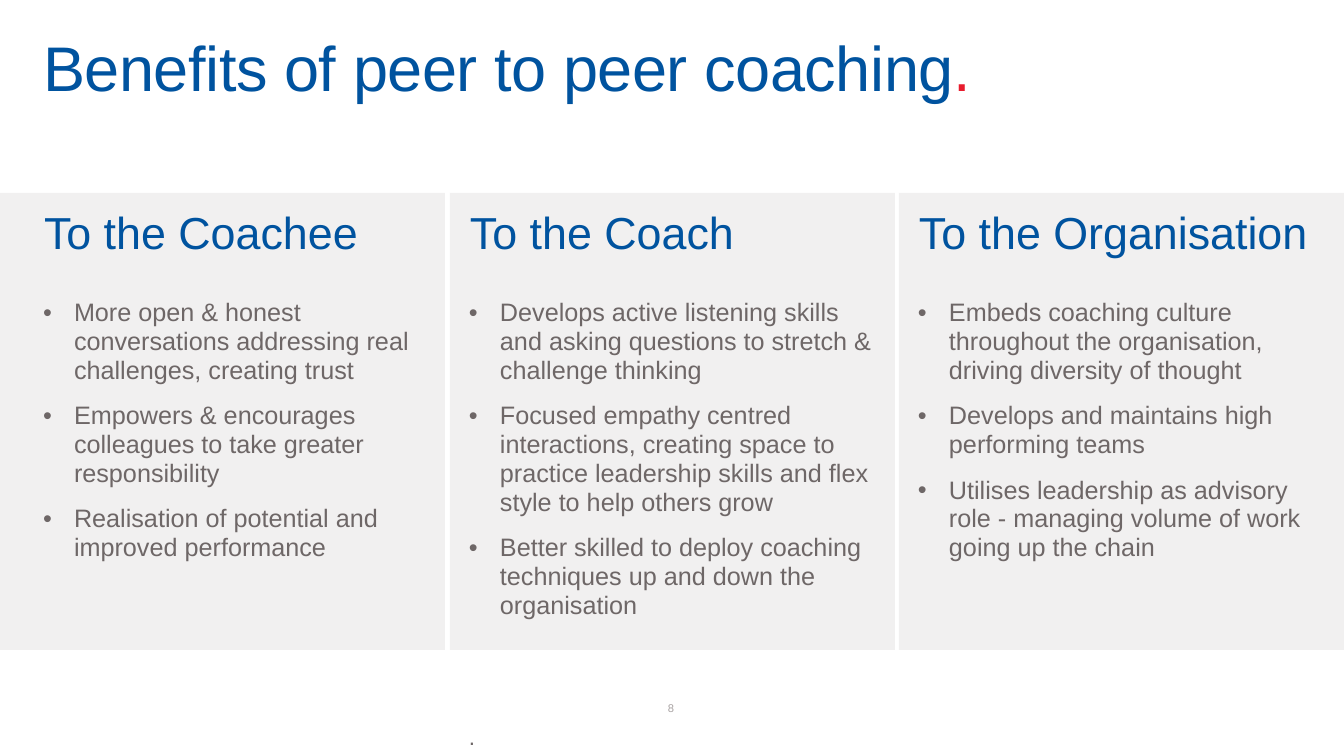
from dataclasses import dataclass
from typing import Any

from lxml.etree import SubElement
from pptx import Presentation
from pptx.dml.color import RGBColor
from pptx.enum.shapes import MSO_SHAPE
from pptx.enum.text import MSO_ANCHOR, MSO_AUTO_SIZE, PP_ALIGN
from pptx.oxml.ns import qn
from pptx.util import Emu, Pt

BLUE = RGBColor(0x00, 0x53, 0x9F)
RED = RGBColor(0xE8, 0x1C, 0x2D)
GREY = RGBColor(0x6E, 0x67, 0x67)
PALE_GREY = RGBColor(0xA9, 0xA3, 0xA3)
PANEL_GREY = RGBColor(0xF1, 0xF0, 0xF0)

SLIDE_WIDTH, SLIDE_HEIGHT = 1344, 756
PANEL_TOP, PANEL_WIDTH, PANEL_HEIGHT = 193, 445, 457
LIST_TOP, LIST_HEIGHT, LIST_INDENT = 299, 306, 31

TITLE_PARA = {"alignment": PP_ALIGN.LEFT, "line_spacing": 0.9, "space_before": Pt(0)}
BODY_PARA = {"alignment": PP_ALIGN.LEFT, "line_spacing": 0.95,
             "space_before": Pt(0), "space_after": Pt(12)}
NUMBER_PARA = {"alignment": PP_ALIGN.CENTER}


@dataclass
class Column:
    heading: str
    benefits: list[str]
    placeholder: int
    inset: int
    list_width: int
    closing: str = ""


COLUMNS = [
    Column("To the Coachee", [
        "More open & honest conversations addressing real challenges, creating trust",
        "Empowers & encourages colleagues to take greater responsibility",
        "Realisation of potential and improved performance",
    ], 1, 43, 391),
    Column("To the Coach", [
        "Develops active listening skills and asking questions to stretch & challenge thinking",
        "Focused empathy centred interactions, creating space to practice leadership skills "
        "and flex style to help others grow",
        "Better skilled to deploy coaching techniques up and down the organisation",
    ], 2, 19, 405, "."),
    Column("To the Organisation", [
        "Embeds coaching culture throughout the organisation, driving diversity of thought",
        "Develops and maintains high performing teams",
        "Utilises leadership as advisory role - managing volume of work going up the chain",
    ], 4, 19, 410),
]


def px(length: int) -> Emu:
    return Emu(round(length * 914400 * 10 / 1008))


def apply(target: Any, values: dict[str, Any]) -> None:
    for name, value in values.items():
        setattr(target, name, value)


def place(box: Any, left: int, top: int, width: int, height: int) -> None:
    apply(box, {"left": px(left), "top": px(top),
                "width": px(width), "height": px(height)})


def set_frame(box: Any, left: int = 0, top: int = 0) -> Any:
    frame = box.text_frame
    apply(frame, {"margin_left": px(left), "margin_top": px(top),
                  "margin_right": 0, "margin_bottom": 0, "word_wrap": True,
                  "auto_size": MSO_AUTO_SIZE.NONE, "vertical_anchor": MSO_ANCHOR.TOP})
    return frame


def add_span(para: Any, text: str, size: int, color: RGBColor) -> Any:
    span = para.add_run()
    span.text = text
    apply(span.font, {"name": "Arial", "size": Pt(size), "bold": False})
    span.font.color.rgb = color
    return span


def set_bullet(para: Any, left: int, first: int, bullet: str = "") -> None:
    properties = para._p.get_or_add_pPr()
    properties.set("marL", str(px(left)))
    properties.set("indent", str(px(first)))
    if bullet:
        SubElement(properties, qn("a:buFont")).set("typeface", "Arial")
        SubElement(properties, qn("a:buChar")).set("char", bullet)
    else:
        SubElement(properties, qn("a:buNone"))


def add_panel(page: Any, column: Column, left: int) -> None:
    panel = page.shapes.add_shape(MSO_SHAPE.RECTANGLE, 0, 0, 0, 0)
    place(panel, left, PANEL_TOP, PANEL_WIDTH, PANEL_HEIGHT)
    panel.shadow.inherit = False
    panel.fill.solid()
    panel.fill.fore_color.rgb = PANEL_GREY
    panel.line.fill.background()
    para = set_frame(panel, column.inset, 16).paragraphs[0]
    set_bullet(para, 1, 0)
    apply(para, BODY_PARA)
    add_span(para, column.heading, 32, BLUE)
    # Panels lie behind the lists
    page.shapes._spTree.insert(2, panel._element)


def fill_list(box: Any, column: Column, left: int) -> None:
    place(box, left + column.inset, LIST_TOP, column.list_width, LIST_HEIGHT)
    frame = set_frame(box)
    for index, benefit in enumerate(column.benefits):
        para = frame.add_paragraph() if index else frame.paragraphs[0]
        set_bullet(para, LIST_INDENT, -LIST_INDENT, "•")
        apply(para, BODY_PARA)
        add_span(para, benefit, 18, GREY)
    if column.closing:
        para = frame.add_paragraph()
        set_bullet(para, 0, 0)
        apply(para, BODY_PARA | {"space_before": Pt(63)})
        add_span(para, column.closing, 16, GREY)


def main() -> None:
    deck = Presentation()
    deck.slide_width, deck.slide_height = px(SLIDE_WIDTH), px(SLIDE_HEIGHT)
    page = deck.slides.add_slide(deck.slide_layouts.get_by_name("Comparison"))
    bodies = {box.placeholder_format.idx: box for box in page.placeholders}

    # Title
    title = page.shapes.title
    place(title, 43, 37, 1257, 73)
    para = set_frame(title).paragraphs[0]
    apply(para, TITLE_PARA)
    for text, color in (("Benefits of peer to peer coaching", BLUE), (".", RED)):
        span = add_span(para, text, 45, color)
        span.font._element.set("spc", "-30")

    # Columns, spread evenly across the slide
    for index, column in enumerate(COLUMNS):
        left = round(index * (SLIDE_WIDTH - PANEL_WIDTH) / (len(COLUMNS) - 1))
        add_panel(page, column, left)
        fill_list(bodies[column.placeholder], column, left)

    # Unused placeholder
    unused = bodies[3]._element
    unused.getparent().remove(unused)

    # Page number
    number = page.shapes.add_textbox(0, 0, 0, 0)
    place(number, 644, 701, 54, 13)
    para = set_frame(number).paragraphs[0]
    apply(para, NUMBER_PARA)
    add_span(para, "8", 8, PALE_GREY)

    deck.save("out.pptx")


if __name__ == "__main__":
    main()
